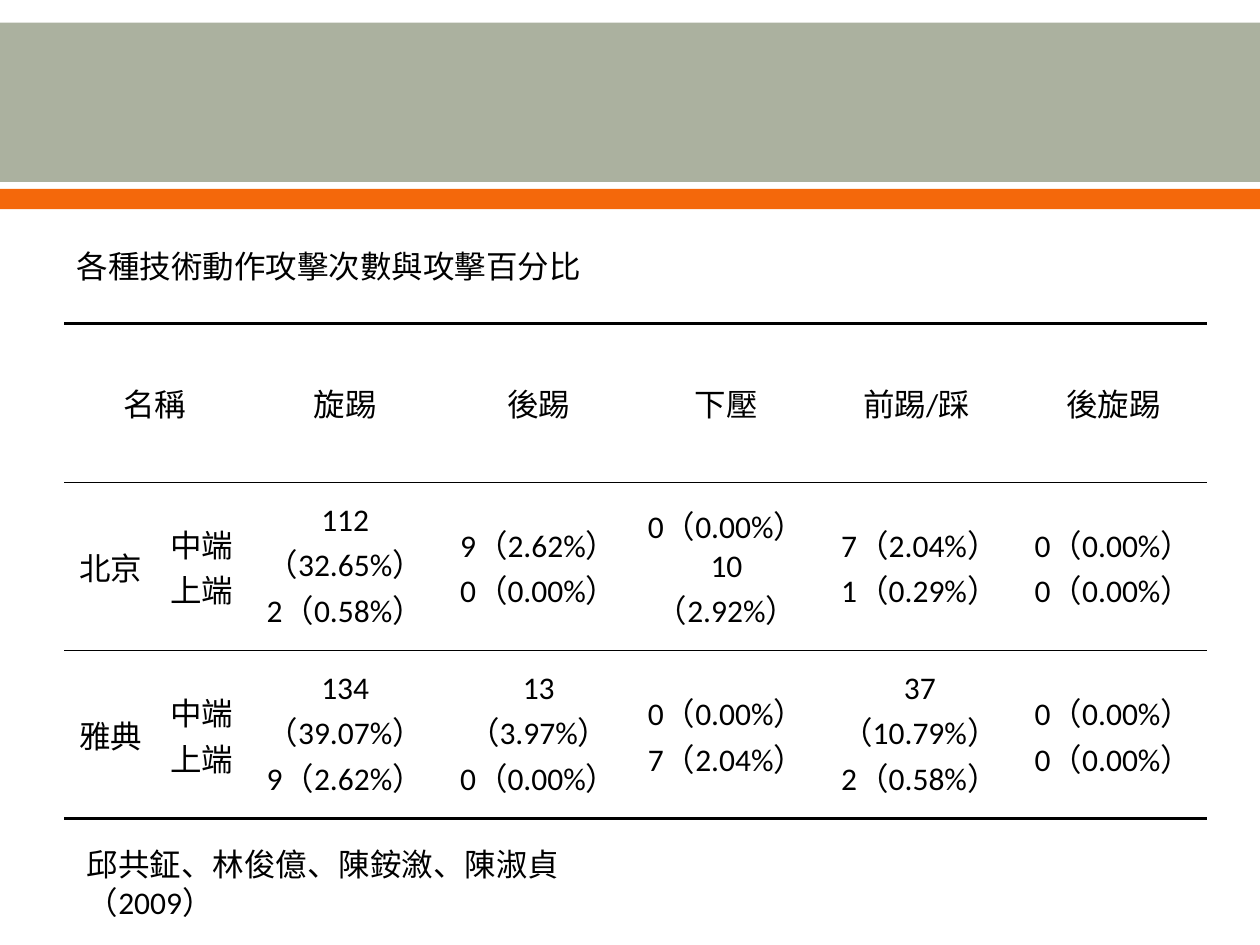
from lxml import etree
from pptx import Presentation
from pptx.dml.color import RGBColor
from pptx.enum.shapes import MSO_SHAPE
from pptx.enum.text import MSO_ANCHOR, PP_ALIGN
from pptx.oxml.ns import qn
from pptx.util import Pt

RECTANGLE = MSO_SHAPE.RECTANGLE
TOP, MIDDLE = MSO_ANCHOR.TOP, MSO_ANCHOR.MIDDLE
CENTER = PP_ALIGN.CENTER
COLORS = {"white": "FFFFFF", "sage": "ABB19F", "orange": "F4680B", "black": "000000"}
PLAIN_TABLE_STYLE = "{2D5ABB26-0587-4C30-8999-92F81FD0307C}"
THICK, THIN = 2.25, 1

COLUMN_WIDTHS = [53.3, 50.4, 113.8, 107.3, 107.3, 113.8, 107.3]
ROW_HEIGHT = 90.6
LEVELS = "中端\n上端"
ROWS = [
    ["名稱", "", "旋踢", "後踢", "下壓", "前踢/踩 ", "後旋踢"],
    ["北京", LEVELS, "112（32.65%）\n2（0.58%）", "9（2.62%）\n0（0.00%）",
     "0（0.00%）\n10（2.92%）", "7（2.04%）\n1（0.29%）", "0（0.00%）\n0（0.00%）"],
    ["雅典", LEVELS, "134（39.07%）\n9（2.62%）", "13（3.97%）\n0（0.00%）",
     "0（0.00%）\n7（2.04%）", "37（10.79%）\n2（0.58%）", "0（0.00%）\n0（0.00%）"],
]
# Rules above and below each row
ROW_RULES = [
    {"a:lnT": THICK, "a:lnB": THIN},
    {"a:lnT": THIN, "a:lnB": THIN},
    {"a:lnT": THIN, "a:lnB": THICK},
]


class SlideBuilder:
    font_size = 18

    def __init__(self, slide):
        self.slide = slide

    def style_font(self, paragraph, font_name):
        font = paragraph.font
        font.name, font.size = font_name, Pt(self.font_size)
        font.color.rgb = RGBColor.from_string(COLORS["black"])

    def band(self, top, height, color):
        shape = self.slide.shapes.add_shape(RECTANGLE, 0, Pt(top), Pt(720), Pt(height))
        shape.shadow.inherit = False
        shape.fill.solid()
        shape.fill.fore_color.rgb = RGBColor.from_string(COLORS[color])
        shape.line.fill.background()

    def text(self, text, left, top, width, height, font_name, anchor, right_inset=7.2):
        shape = self.slide.shapes.add_textbox(Pt(left), Pt(top), Pt(width), Pt(height))
        frame = shape.text_frame
        frame.word_wrap = True
        frame.vertical_anchor = anchor
        frame.margin_right = Pt(right_inset)
        frame.text = text
        self.style_font(frame.paragraphs[0], font_name)

    def border(self, cell, edge, width):
        line = etree.SubElement(cell._tc.get_or_add_tcPr(), qn(edge), w=str(Pt(width)))
        fill = etree.SubElement(line, qn("a:solidFill"))
        etree.SubElement(fill, qn("a:srgbClr"), val=COLORS["black"])

    def cell(self, cell, text, rules):
        cell.margin_left = cell.margin_right = Pt(5)
        cell.margin_top = cell.margin_bottom = 0
        cell.vertical_anchor = MIDDLE
        for edge, width in rules.items():
            self.border(cell, edge, width)
        cell.fill.background()
        cell.text = text
        for paragraph in cell.text_frame.paragraphs:
            paragraph.alignment = CENTER
            self.style_font(paragraph, "Calibri")

    def table(self, rows, left, top):
        frame = self.slide.shapes.add_table(
            len(rows), len(COLUMN_WIDTHS), Pt(left), Pt(top),
            Pt(sum(COLUMN_WIDTHS)), Pt(ROW_HEIGHT * len(rows)))
        table = frame.table
        table.horz_banding = table.first_row = False
        table._tbl.tblPr.find(qn("a:tableStyleId")).text = PLAIN_TABLE_STYLE
        for column, width in zip(table.columns, COLUMN_WIDTHS):
            column.width = Pt(width)
        for row_index, texts in enumerate(rows):
            table.rows[row_index].height = Pt(ROW_HEIGHT)
            for column_index, text in enumerate(texts):
                self.cell(table.cell(row_index, column_index), text, ROW_RULES[row_index])
        table.cell(0, 0).merge(table.cell(0, 1))


def main():
    presentation = Presentation()
    presentation.slide_width, presentation.slide_height = Pt(720), Pt(540)
    builder = SlideBuilder(presentation.slides.add_slide(presentation.slide_layouts[6]))

    # Header bands
    builder.band(8, 114.5, "white")
    builder.band(13, 91, "sage")
    builder.band(108, 11.5, "orange")

    # Table with its caption and source
    builder.table(ROWS, 36.7, 185)
    builder.text("各種技術動作攻擊次數與攻擊百分比", 36.7, 137.5, 306, 29, "Arial", MIDDLE)
    builder.text("邱共鉦、林俊億、陳銨漵、陳淑貞（2009）", 42.5, 479.5, 362, 29,
                 "Calibri", TOP, right_inset=40)

    presentation.save("out.pptx")


if __name__ == "__main__":
    main()
